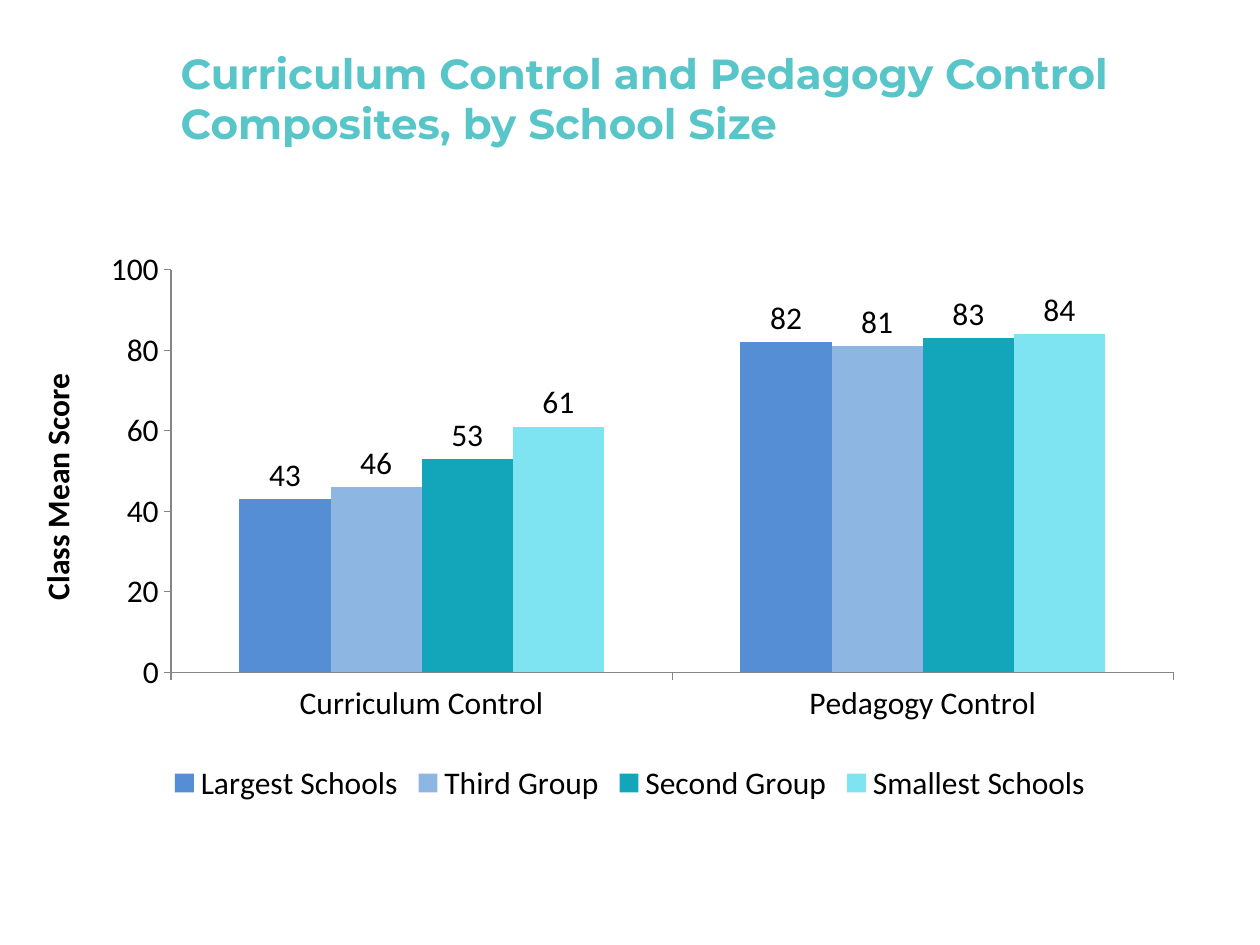
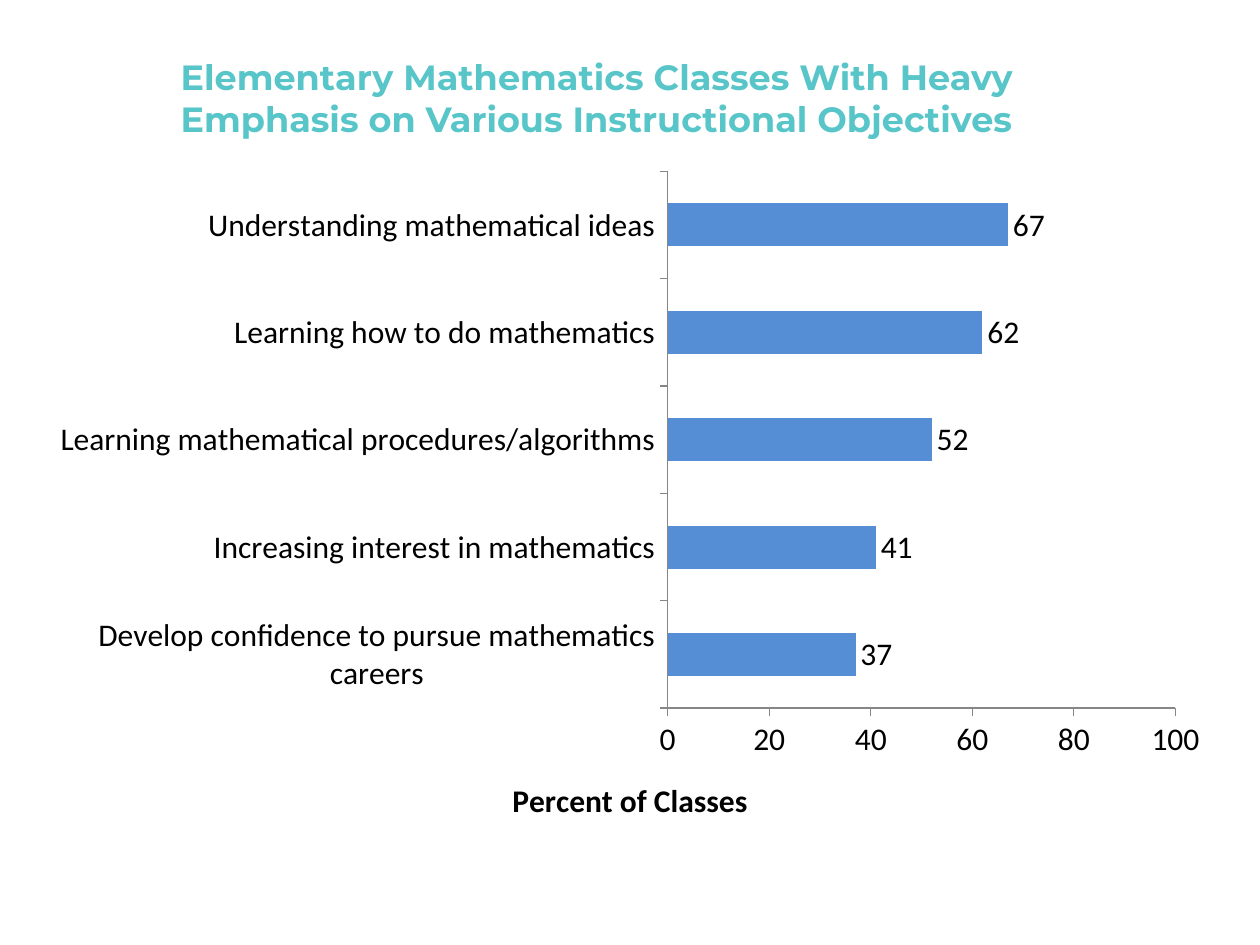
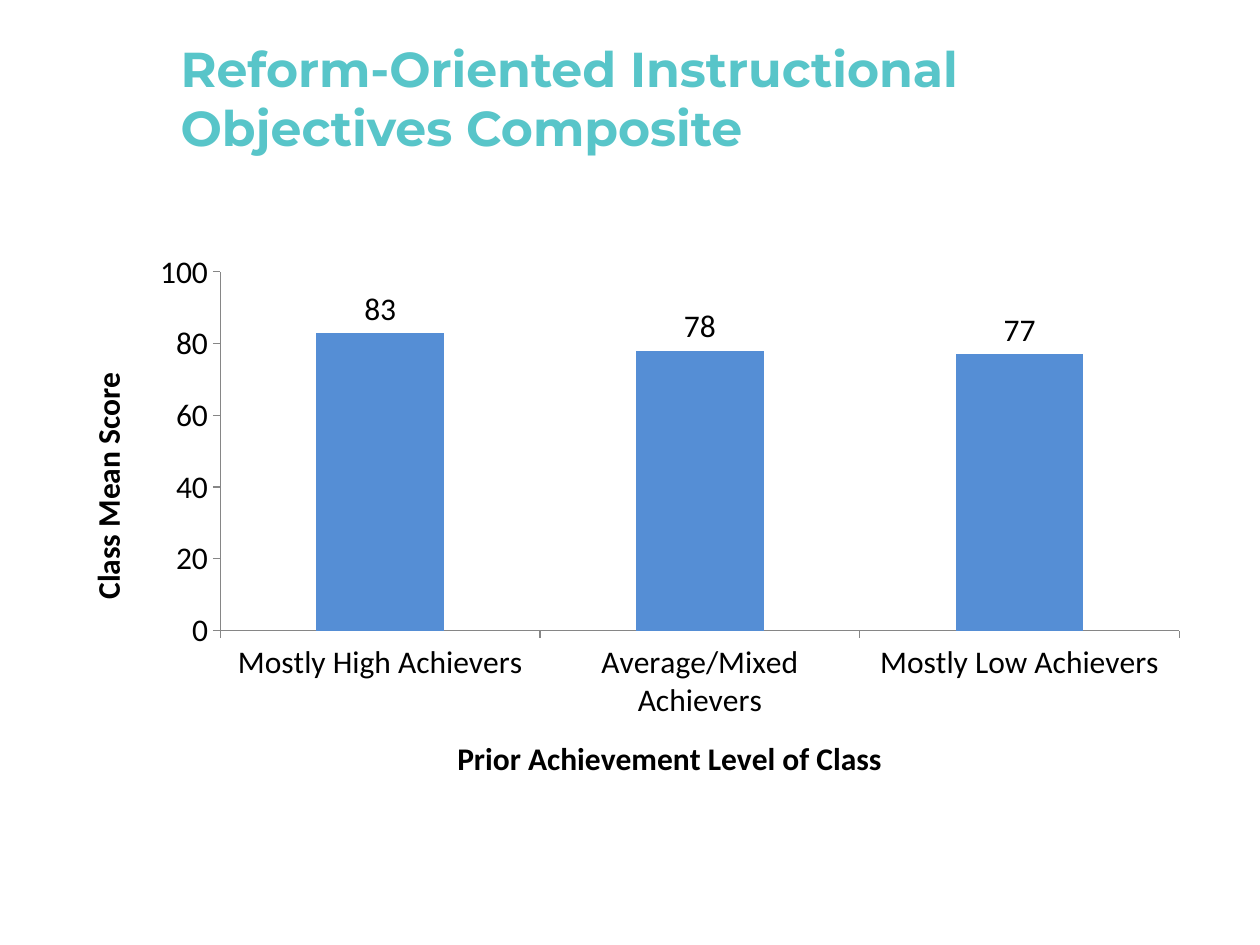
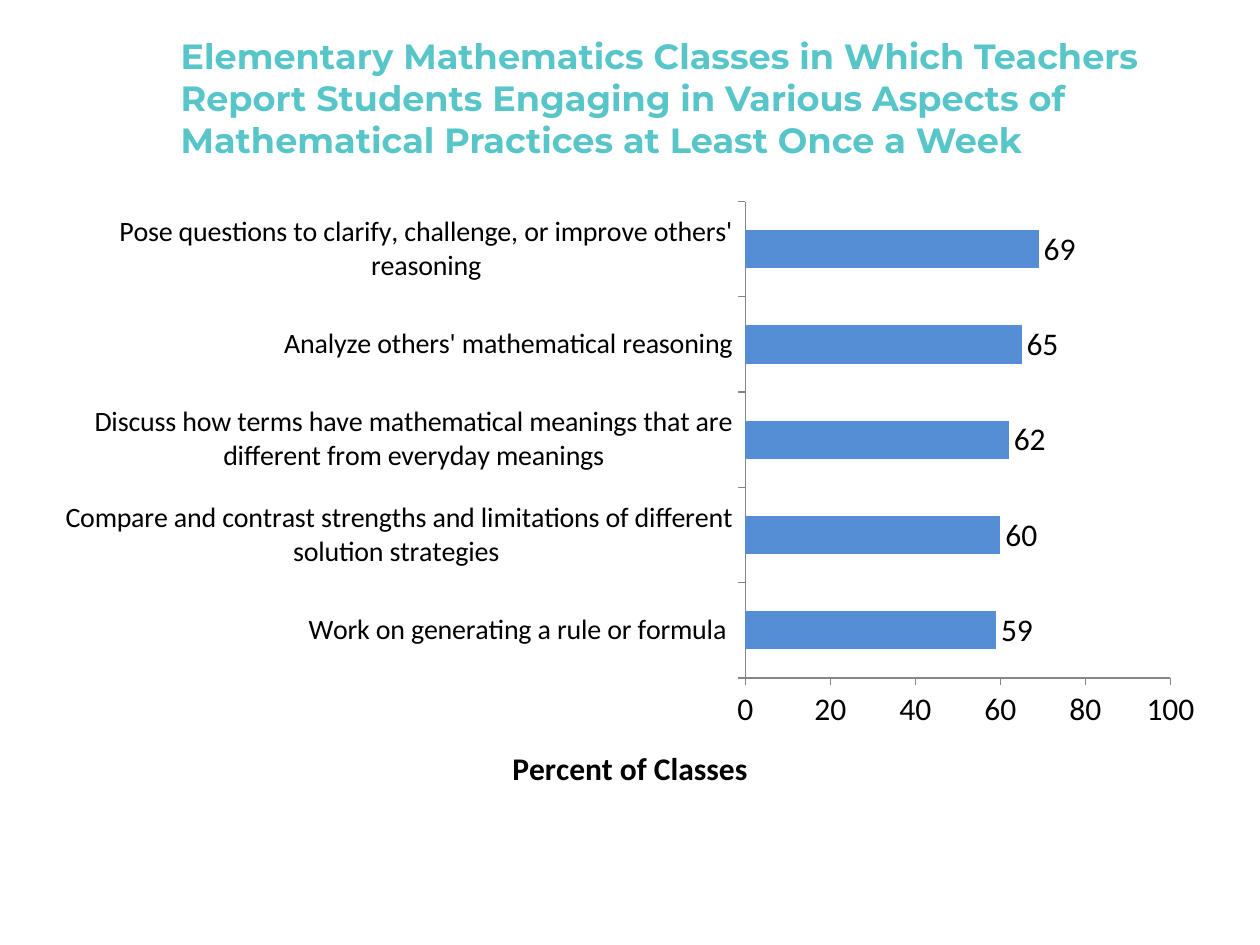
import pptx
import pptx.chart.data
import pptx.dml.color
import pptx.enum.chart
import pptx.enum.text
import pptx.oxml
import pptx.util
from pptx.oxml import ns

Pt = pptx.util.Pt
CHART_TYPES = pptx.enum.chart.XL_CHART_TYPE
TITLE_FONT, CHART_FONT = "Montserrat", "Calibri"
TITLE_COLOR, TEXT_COLOR, AXIS_COLOR = "58C5C9", "000000", "868686"
SERIES_COLORS = ["558ED5", "8EB6E3", "13A6BA", "7FE4F2"]
CHART_SIZE = 18


def color(hex_string):
    """Return the colour for a hex string."""
    return pptx.dml.color.RGBColor.from_string(hex_string)


def format_font(font, name=CHART_FONT, size=CHART_SIZE, hex_color=TEXT_COLOR, bold=False):
    """Set the typeface, size, colour and weight of a font."""
    font.name = name
    font.size = Pt(size)
    font.bold = bold
    font.color.rgb = color(hex_color)


def write_text(text_frame, text, align=None, **font_format):
    """Write one formatted paragraph into a text frame."""
    paragraph = text_frame.paragraphs[0]
    paragraph.alignment = align
    run = paragraph.add_run()
    run.text = text
    format_font(run.font, **font_format)


def add_titled_slide(presentation, title, size):
    """Add a title-only slide and place its title."""
    slide = presentation.slides.add_slide(presentation.slide_layouts[5])
    shape = slide.shapes.title
    shape.left, shape.top, shape.width, shape.height = Pt(96), Pt(21.6), Pt(588), Pt(68.4)
    text_frame = shape.text_frame
    text_frame.auto_size = pptx.enum.text.MSO_AUTO_SIZE.NONE
    text_frame.vertical_anchor = pptx.enum.text.MSO_ANCHOR.MIDDLE
    write_text(text_frame, title, align=pptx.enum.text.PP_ALIGN.LEFT,
               name=TITLE_FONT, size=size, hex_color=TITLE_COLOR, bold=True)
    return slide


def format_axis(axis, title=None, label_size=CHART_SIZE):
    """Give an axis its line, outside ticks, labels and optional title."""
    axis.has_major_gridlines = False
    axis.major_tick_mark = pptx.enum.chart.XL_TICK_MARK.OUTSIDE
    axis.minor_tick_mark = pptx.enum.chart.XL_TICK_MARK.NONE
    axis.format.line.color.rgb = color(AXIS_COLOR)
    axis.format.line.width = Pt(0.75)
    format_font(axis.tick_labels.font, size=label_size)
    axis.has_title = title is not None
    if title:
        write_text(axis.axis_title.text_frame, title, bold=True)


def format_series(series, hex_color):
    """Fill a series and show its values beyond the bar ends."""
    series.smooth = False if hasattr(series, "smooth") else None
    series.format.fill.solid()
    series.format.fill.fore_color.rgb = color(hex_color)
    series.invert_if_negative = False
    labels = series.data_labels
    labels.show_value = True
    labels.position = pptx.enum.chart.XL_LABEL_POSITION.OUTSIDE_END
    format_font(labels.font)


def place_plot(chart, left, top, width, height):
    """Fix the inner plot area as fractions of the chart."""
    plot_area = chart.plots[0]._element.getparent()
    for layout in plot_area.findall(ns.qn("c:layout")):
        plot_area.remove(layout)
    values = {"x": left, "y": top, "w": width, "h": height}
    numbers = "".join(f'<c:{key} val="{value}"/>' for key, value in values.items())
    plot_area.insert(0, pptx.oxml.parse_xml(
        f'<c:layout {ns.nsdecls("c")}><c:manualLayout><c:layoutTarget val="inner"/>'
        f'<c:xMode val="edge"/><c:yMode val="edge"/>{numbers}</c:manualLayout></c:layout>'))


def add_legend(chart):
    """Show a legend below the plot."""
    chart.has_legend = True
    chart.legend.position = pptx.enum.chart.XL_LEGEND_POSITION.BOTTOM
    chart.legend.include_in_layout = False
    format_font(chart.legend.font)


def add_bar_chart(slide, chart_type, box, categories, series_values,
                  value_title, category_title=None, category_size=CHART_SIZE):
    """Add a clustered chart on a scale from 0 to 100."""
    chart_data = pptx.chart.data.CategoryChartData()
    chart_data.categories = categories
    for name, values in series_values.items():
        chart_data.add_series(name, values)
    chart = slide.shapes.add_chart(chart_type, *map(Pt, box), chart_data).chart
    format_font(chart.font)
    chart.has_title = False
    chart.has_legend = False
    plot = chart.plots[0]
    plot.gap_width = 150
    plot.vary_by_categories = False
    for series, hex_color in zip(plot.series, SERIES_COLORS):
        format_series(series, hex_color)
    format_axis(chart.category_axis, category_title, category_size)
    format_axis(chart.value_axis, value_title)
    chart.value_axis.minimum_scale = 0
    chart.value_axis.maximum_scale = 100
    chart.value_axis.major_unit = 20
    return chart


def main():
    """Build the four chart slides and save them."""
    presentation = pptx.Presentation()
    presentation.slide_width, presentation.slide_height = Pt(720), Pt(540)

    slide = add_titled_slide(
        presentation, "Curriculum Control and Pedagogy Control Composites, by School Size", 24)
    control_chart = add_bar_chart(
        slide, CHART_TYPES.COLUMN_CLUSTERED, (15, 138, 690, 324),
        ["Curriculum Control", "Pedagogy Control"],
        {"Largest Schools": (43, 82), "Third Group": (46, 81),
         "Second Group": (53, 83), "Smallest Schools": (61, 84)},
        "Class Mean Score")
    add_legend(control_chart)
    place_plot(control_chart, 0.12, 0.05, 0.83, 0.71)

    slide = add_titled_slide(
        presentation,
        "Elementary Mathematics Classes With Heavy Emphasis on Various Instructional Objectives", 20)
    add_bar_chart(
        slide, CHART_TYPES.BAR_CLUSTERED, (21, 90, 678, 396),
        ["Develop confidence to pursue mathematics careers",
         "Increasing interest in mathematics",
         "Learning mathematical procedures/algorithms",
         "Learning how to do mathematics",
         "Understanding mathematical ideas"],
        {"Series 1": (37, 41, 52, 62, 67)}, "Percent of Classes")

    slide = add_titled_slide(
        presentation, "Reform-Oriented Instructional Objectives Composite", 28)
    add_bar_chart(
        slide, CHART_TYPES.COLUMN_CLUSTERED, (33, 138, 654, 324),
        ["Mostly High Achievers", "Average/Mixed Achievers", "Mostly Low Achievers"],
        {"Series 1": (83, 78, 77)}, "Class Mean Score", "Prior Achievement Level of Class")

    slide = add_titled_slide(
        presentation,
        "Elementary Mathematics Classes in Which Teachers Report Students Engaging in "
        "Various Aspects of Mathematical Practices at Least Once a Week", 20)
    add_bar_chart(
        slide, CHART_TYPES.BAR_CLUSTERED, (24, 108, 672, 360),
        ["Work on generating a rule or formula ",
         "Compare and contrast strengths and limitations of different solution strategies ",
         "Discuss how terms have mathematical meanings that are different from everyday meanings",
         "Analyze others' mathematical reasoning",
         "Pose questions to clarify, challenge, or improve others' reasoning"],
        {"Series 1": (59, 60, 62, 65, 69)}, "Percent of Classes", category_size=16)

    presentation.save("out.pptx")


if __name__ == "__main__":
    main()
